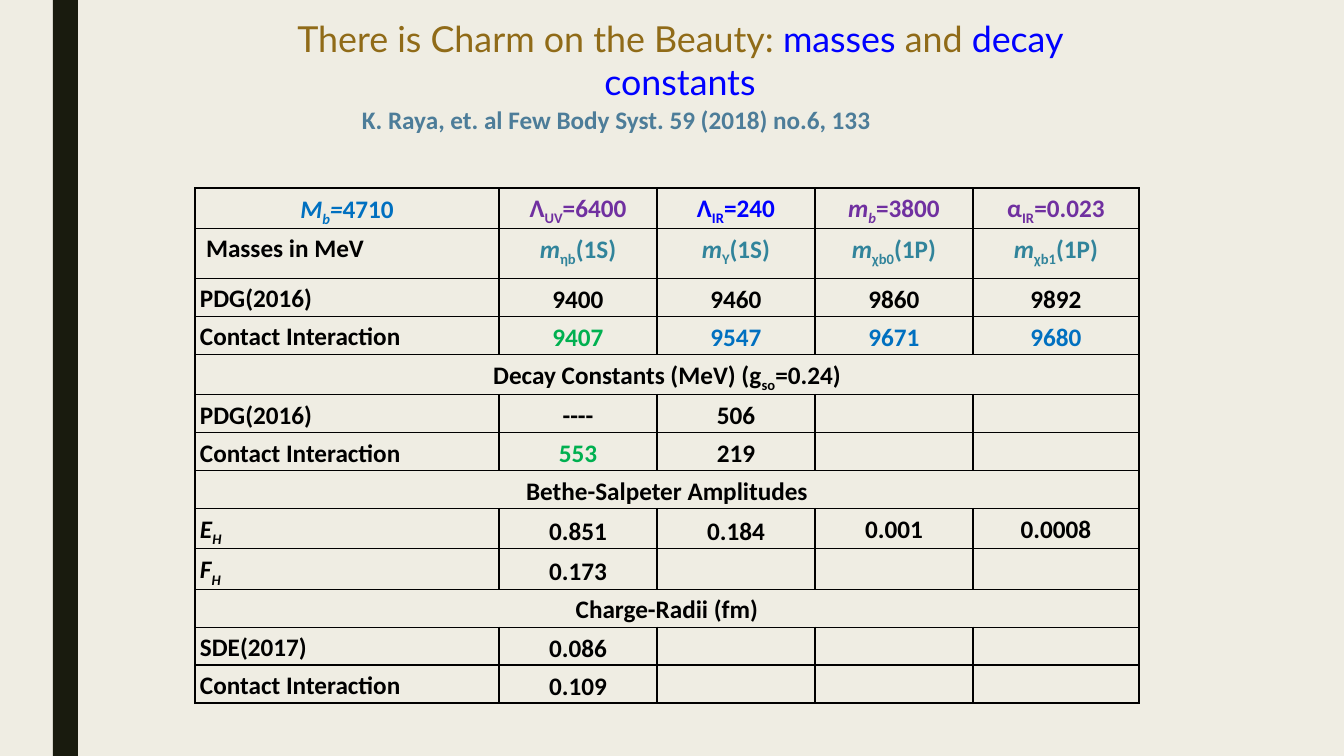
from lxml import etree
from pptx import Presentation
from pptx.dml.color import RGBColor
from pptx.enum.shapes import MSO_SHAPE
from pptx.enum.text import MSO_ANCHOR, MSO_AUTO_SIZE, PP_ALIGN
from pptx.oxml.ns import qn
from pptx.util import Emu, Pt

RECTANGLE = MSO_SHAPE.RECTANGLE
TOP, MIDDLE, BOTTOM = MSO_ANCHOR.TOP, MSO_ANCHOR.MIDDLE, MSO_ANCHOR.BOTTOM
LEFT, CENTER = PP_ALIGN.LEFT, PP_ALIGN.CENTER
NO_AUTOFIT = MSO_AUTO_SIZE.NONE
TITLE_ONLY = 5
EMU_PER_PX = 914400 / 100.8

COLORS = {
    "background": "EFEDE3", "bar": "191B0E", "title": "906B18",
    "citation": "4D7D99", "black": "000000", "blue": "0000FF",
    "azure": "0070C0", "purple": "7030A0", "teal": "31849B", "green": "00B050",
}

COLUMN_WIDTHS = [304, 158, 158, 158, 166]
# Each row: height, then cells of (text, colour).
# In the text, * switches italics and ~ switches subscript.
ROWS = [
    (40, [("*M~b~=*4710", "azure"), ("Λ~UV~=6400", "purple"), ("Λ~IR~=240", "blue"),
          ("*m~b~*=3800", "purple"), ("α~IR~=0.023", "purple")]),
    (50, [("Masses in MeV", "black"), ("*m*~ηb~(1S)", "teal"), ("*m*~Υ~(1S)", "teal"),
          ("*m*~χb0~(1P)", "teal"), ("*m*~χb1~(1P)", "teal")]),
    (38, [("PDG(2016)", "black"), ("9400", "black"), ("9460", "black"),
          ("9860", "black"), ("9892", "black")]),
    (38, [("Contact Interaction", "black"), ("9407", "green"), ("9547", "azure"),
          ("9671", "azure"), ("9680", "azure")]),
    (40, [("Decay Constants (MeV) (g~so~=0.24)", "black")]),
    (38, [("PDG(2016)", "black"), ("----", "black"), ("506", "black")]),
    (38, [("Contact Interaction", "black"), ("553", "green"), ("219", "black")]),
    (38, [("Bethe-Salpeter Amplitudes", "black")]),
    (40, [("*E~H~*", "black"), ("0.851", "black"), ("0.184", "black"),
          ("0.001", "black"), ("0.0008", "black")]),
    (40, [("*F~H~*", "black"), ("0.173", "black")]),
    (38, [("Charge-Radii (fm)", "black")]),
    (38, [("SDE(2017)", "black"), ("0.086", "black")]),
    (38, [("Contact Interaction", "black"), ("0.109", "black")]),
]
HEADER_ROW, UNITS_ROW = 0, 1
TOP_ANCHORED = {(8, 3), (8, 4)}


def px(length):
    return Emu(round(length * EMU_PER_PX))


def rgb(name):
    return RGBColor.from_string(COLORS[name])


def format_font(font, name, size, color, bold=False):
    font.name, font.size, font.bold = name, Pt(size), bold
    font.color.rgb = rgb(color)


def write_marked_text(paragraph, text, color):
    """Add runs, reading * as italic and ~ as subscript switches."""
    italic = subscript = False
    piece = ""
    for character in text + "*":
        if character not in "*~":
            piece += character
            continue
        if piece:
            run = paragraph.add_run()
            run.text = piece
            format_font(run.font, "Calibri", 18, color, bold=True)
            run.font.italic = italic
            if subscript:
                run.font._element.set("baseline", "-25000")
            piece = ""
        if character == "*":
            italic = not italic
        else:
            subscript = not subscript


def add_borders(cell):
    properties = cell._tc.get_or_add_tcPr()
    for index, side in enumerate(("lnL", "lnR", "lnT", "lnB")):
        line = etree.Element(qn(f"a:{side}"), w=str(Pt(1)))
        fill = etree.SubElement(line, qn("a:solidFill"))
        etree.SubElement(fill, qn("a:srgbClr"), val=COLORS["black"])
        properties.insert(index, line)


def add_side_bar(slide, left, top, width, height):
    bar = slide.shapes.add_shape(RECTANGLE, px(left), px(top), px(width), px(height))
    bar.shadow.inherit = False
    bar.fill.solid()
    bar.fill.fore_color.rgb = rgb("bar")
    bar.line.fill.background()


def add_title(slide, left, top, width, height):
    title = slide.shapes.title
    title.left, title.top = px(left), px(top)
    title.width, title.height = px(width), px(height)
    text_frame = title.text_frame
    text_frame.auto_size = NO_AUTOFIT
    text_frame.word_wrap = True
    text_frame.vertical_anchor = BOTTOM
    paragraph = text_frame.paragraphs[0]
    paragraph.alignment = CENTER
    for text, color in (("There is Charm on the Beauty: ", "title"), ("masses", "blue"),
                        (" and ", "title"), ("decay constants", "blue")):
        run = paragraph.add_run()
        run.text = text
        format_font(run.font, "Lato", 25.6, color)


def add_citation(slide, left, top, width, height):
    box = slide.shapes.add_textbox(px(left), px(top), px(width), px(height))
    box.text_frame.word_wrap = True
    box.text_frame.text = "K. Raya, et. al Few Body Syst. 59 (2018) no.6, 133"
    run = box.text_frame.paragraphs[0].runs[0]
    format_font(run.font, "Calibri", 18, "citation", bold=True)


def add_results_table(slide, left, top):
    width, height = sum(COLUMN_WIDTHS), sum(row_height for row_height, _ in ROWS)
    table = slide.shapes.add_table(len(ROWS), len(COLUMN_WIDTHS), px(left), px(top),
                                   px(width), px(height)).table
    table.first_row = table.horz_banding = False
    for column, column_width in zip(table.columns, COLUMN_WIDTHS):
        column.width = px(column_width)

    for row, (row_height, contents) in enumerate(ROWS):
        table.rows[row].height = px(row_height)
        is_section = len(contents) == 1
        if is_section:
            table.cell(row, 0).merge(table.cell(row, len(COLUMN_WIDTHS) - 1))
        for column in range(len(COLUMN_WIDTHS)):
            cell = table.cell(row, column)
            cell.fill.background()
            add_borders(cell)
            is_label = column == 0 and row != HEADER_ROW and not is_section
            is_parameter = row == HEADER_ROW and column > 0
            is_value = row > UNITS_ROW and column > 0 and (row, column) not in TOP_ANCHORED
            cell.margin_left = cell.margin_right = px(0 if is_parameter else 5)
            cell.margin_top = px(0 if is_parameter else 1)
            cell.margin_bottom = 0
            if is_label and row == UNITS_ROW:
                cell.margin_left = px(11)
            cell.vertical_anchor = MIDDLE if is_value else TOP
            if column < len(contents):
                paragraph = cell.text_frame.paragraphs[0]
                paragraph.alignment = LEFT if is_label else CENTER
                paragraph.line_spacing = 1.15
                paragraph.space_after = Pt(10)
                write_marked_text(paragraph, *contents[column])


def main():
    presentation = Presentation()
    presentation.slide_width, presentation.slide_height = px(1344), px(756)
    slide = presentation.slides.add_slide(presentation.slide_layouts[TITLE_ONLY])
    slide.background.fill.solid()
    slide.background.fill.fore_color.rgb = rgb("background")

    add_side_bar(slide, 53, 0, 25, 756)
    add_results_table(slide, 195, 188)
    add_citation(slide, 352, 99, 865, 40)
    add_title(slide, 210, 24, 940, 84)
    presentation.save("out.pptx")


if __name__ == "__main__":
    main()
